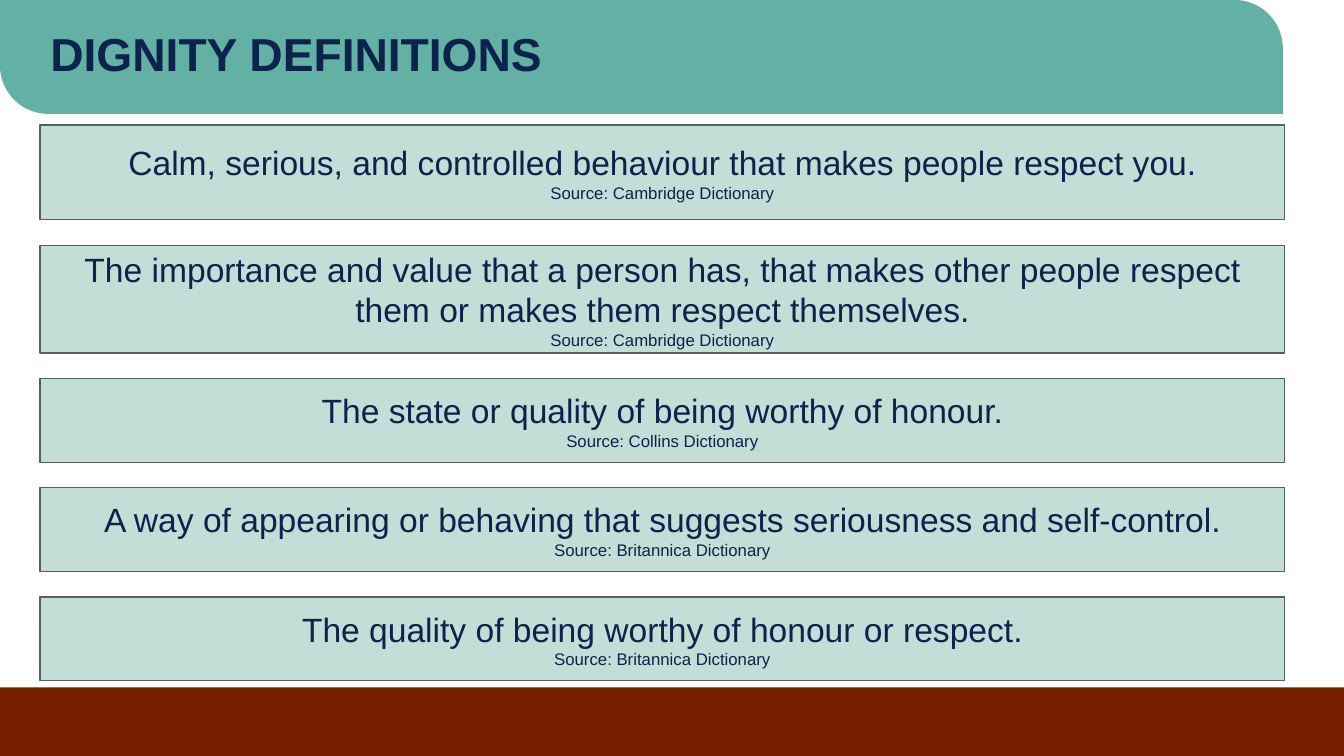
from pptx import Presentation
from pptx import util as u
from pptx.dml.color import RGBColor
from pptx.enum import shapes, text

NAVY = RGBColor(0x0C, 0x24, 0x4C)
TEAL = RGBColor(0x63, 0xB1, 0xA4)
MINT = RGBColor(0xC3, 0xDD, 0xD7)
SLATE = RGBColor(0x55, 0x61, 0x5E)
RUST = RGBColor(0x76, 0x20, 0x00)

WIDTH, HEIGHT = 33.87, 19.05
BAND_TOP = 17.32
CARD_LEFT, CARD_WIDTH, CARD_GAP = 1.01, 31.37, 0.64
FIRST_CARD_TOP = 3.15

# Card height, definition, source
DEFINITIONS = [
    (2.39, "Calm, serious, and controlled behaviour that makes people respect you.",
     "Source: Cambridge Dictionary"),
    (2.72, "The importance and value that a person has, that makes other people "
           "respect them or makes them respect themselves.",
     "Source: Cambridge Dictionary"),
    (2.11, "The state or quality of being worthy of honour.",
     "Source: Collins Dictionary"),
    (2.11, "A way of appearing or behaving that suggests seriousness and self-control.",
     "Source: Britannica Dictionary"),
    (2.11, "The quality of being worthy of honour or respect.",
     "Source: Britannica Dictionary"),
]


class SlideBuilder:
    """Holds the slide and its text style; lengths are in centimetres."""

    font_name = "Arial"
    font_color = NAVY

    def __init__(self, slide):
        self.slide = slide

    def style(self, para, size, bold=False):
        for span in para.runs:
            span.font.name = self.font_name
            span.font.size = u.Pt(size)
            span.font.bold = bold
            span.font.color.rgb = self.font_color

    def panel(self, kind, left, top, width, height, fill, line=None):
        """Add a filled preset shape, outlined only when a line colour is given."""
        box = self.slide.shapes.add_shape(
            kind, u.Cm(left), u.Cm(top), u.Cm(width), u.Cm(height))
        box.shadow.inherit = False
        box.fill.solid()
        box.fill.fore_color.rgb = fill
        if line is None:
            box.line.fill.background()
        else:
            box.line.color.rgb = line
            box.line.width = u.Pt(1)
        return box

    def title(self, wording, left, top, width, height):
        box = self.slide.shapes.add_textbox(
            u.Cm(left), u.Cm(top), u.Cm(width), u.Cm(height))
        frame = box.text_frame
        frame.word_wrap = True
        frame.text = wording
        para = frame.paragraphs[0]
        para.line_spacing = 0.9
        self.style(para, 33, bold=True)

    def card(self, top, height, definition, source):
        box = self.panel(shapes.MSO_SHAPE.RECTANGLE, CARD_LEFT, top,
                         CARD_WIDTH, height, MINT, SLATE)
        frame = box.text_frame
        frame.word_wrap = True
        frame.vertical_anchor = text.MSO_ANCHOR.MIDDLE
        frame.text = f"{definition}\n{source}"
        for para, size in zip(frame.paragraphs, (24, 12)):
            para.alignment = text.PP_ALIGN.CENTER
            self.style(para, size)


def main():
    deck = Presentation()
    deck.slide_width, deck.slide_height = u.Cm(WIDTH), u.Cm(HEIGHT)
    page = SlideBuilder(deck.slides.add_slide(deck.slide_layouts[6]))

    page.panel(shapes.MSO_SHAPE.RECTANGLE, 0, BAND_TOP,
               WIDTH, HEIGHT - BAND_TOP, RUST)
    header = page.panel(shapes.MSO_SHAPE.ROUND_2_DIAG_RECTANGLE,
                        0, 0, 32.33, 2.87, TEAL)
    header.adjustments[0] = 0
    header.adjustments[1] = 0.425
    page.title("DIGNITY DEFINITIONS", 1.02, 0.66, 30, 2.2)

    top = FIRST_CARD_TOP
    for height, definition, source in DEFINITIONS:
        page.card(top, height, definition, source)
        top += height + CARD_GAP

    deck.save("out.pptx")


if __name__ == "__main__":
    main()
